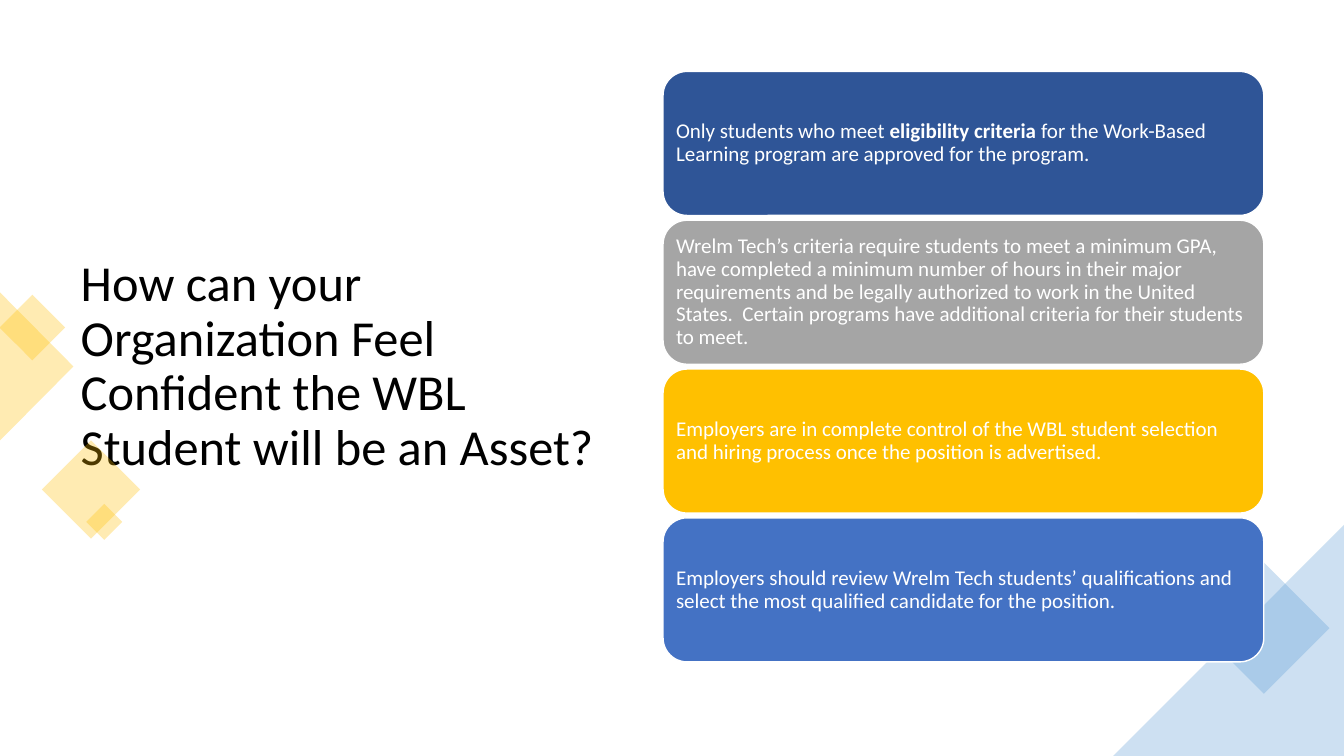
from lxml import etree
from pptx import Presentation
from pptx import util as u
from pptx.dml.color import RGBColor
from pptx.enum import shapes, text
from pptx.oxml import ns

BLACK = RGBColor(0x00, 0x00, 0x00)
WHITE = RGBColor(0xFF, 0xFF, 0xFF)
NAVY = RGBColor(0x2F, 0x55, 0x97)
GRAY = RGBColor(0xA5, 0xA5, 0xA5)
GOLD = RGBColor(0xFF, 0xC0, 0x00)
BLUE = RGBColor(0x44, 0x72, 0xC4)
SKY = RGBColor(0x5B, 0x9B, 0xD5)

TRIANGLE = shapes.MSO_SHAPE.ISOSCELES_TRIANGLE
SQUARE = shapes.MSO_SHAPE.RECTANGLE

DECORATIONS = [
    (TRIANGLE, (-0.94, 8.31, 3.73, 1.85), 90, GOLD),
    (SQUARE, (0.23, 7.67, 1.17, 1.17), 45, GOLD),
    (SQUARE, (1.42, 11.46, 1.75, 1.75), 315, GOLD),
    (SQUARE, (2.31, 12.83, 0.64, 0.64), 315, GOLD),
    (TRIANGLE, (28.27, 15.54, 8.28, 4.11), 135, SKY),
    (SQUARE, (30.68, 14.66, 2.34, 2.34), 45, SKY),
]

CARDS = [
    (NAVY, [("Only students who meet ", False),
            ("eligibility criteria ", True),
            ("for the Work-Based Learning program are approved for the program.", False)]),
    (GRAY, [("Wrelm Tech’s criteria require students to meet a minimum GPA, have completed "
             "a minimum number of hours in their major requirements and be legally "
             "authorized to work in the United States.  Certain programs have additional "
             "criteria for their students to meet.", False)]),
    (GOLD, [("Employers are in complete control of the WBL student selection and hiring "
             "process once the position is advertised.", False)]),
    (BLUE, [("Employers should review Wrelm Tech students’ qualifications and select the "
             "most qualified candidate for the position.", False)]),
]
CARD_TOP = 1.8
CARD_PITCH = 3.75


class SlideBuilder:
    font = "Calibri"
    title_size = u.Pt(36)
    card_size = u.Pt(15)
    card_inset = u.Cm(0.15)
    opacity = 30

    def __init__(self, slide):
        self.slide = slide

    def style_paragraph(self, paragraph, size, color):
        paragraph.alignment = text.PP_ALIGN.LEFT
        paragraph.line_spacing = 0.9
        paragraph.font.name = self.font
        paragraph.font.size = size
        paragraph.font.color.rgb = color

    def title(self, wording, box):
        title = self.slide.shapes.title
        title.left, title.top, title.width, title.height = map(u.Cm, box)
        frame = title.text_frame
        frame.text = wording
        frame.word_wrap = True
        frame.auto_size = text.MSO_AUTO_SIZE.NONE
        frame.vertical_anchor = text.MSO_ANCHOR.MIDDLE
        self.style_paragraph(frame.paragraphs[0], self.title_size, BLACK)

    def shape(self, kind, box, color):
        shape = self.slide.shapes.add_shape(kind, *map(u.Cm, box))
        shape.shadow.inherit = False
        shape.fill.solid()
        shape.fill.fore_color.rgb = color
        return shape

    def decoration(self, kind, box, rotation, color):
        shape = self.shape(kind, box, color)
        shape.rotation = rotation
        shape.line.fill.background()
        fill_color = shape.fill._xPr.find(ns.qn("a:solidFill"))[0]
        alpha = etree.SubElement(fill_color, ns.qn("a:alpha"))
        alpha.set("val", str(self.opacity * 1000))

    def card(self, box, color, runs):
        shape = self.shape(shapes.MSO_SHAPE.ROUNDED_RECTANGLE, box, color)
        shape.line.color.rgb = WHITE
        shape.line.width = u.Pt(1)
        frame = shape.text_frame
        frame.word_wrap = True
        frame.vertical_anchor = text.MSO_ANCHOR.MIDDLE
        frame.margin_left = frame.margin_right = self.card_inset
        frame.margin_top = frame.margin_bottom = self.card_inset
        paragraph = frame.paragraphs[0]
        self.style_paragraph(paragraph, self.card_size, WHITE)
        for wording, bold in runs:
            run = paragraph.add_run()
            run.text = wording
            run.font.bold = bold


def main():
    presentation = Presentation()
    presentation.slide_width = u.Cm(33.87)
    presentation.slide_height = u.Cm(19.05)
    title_only = presentation.slide_layouts[5]
    builder = SlideBuilder(presentation.slides.add_slide(title_only))

    builder.title("How can your Organization Feel Confident the WBL Student will be an Asset?",
                  (1.78, 1.73, 13.87, 15.04))
    for decoration in DECORATIONS:
        builder.decoration(*decoration)
    for index, (color, runs) in enumerate(CARDS):
        builder.card((16.71, CARD_TOP + index * CARD_PITCH, 15.14, 3.63), color, runs)

    presentation.save("out.pptx")


if __name__ == "__main__":
    main()
